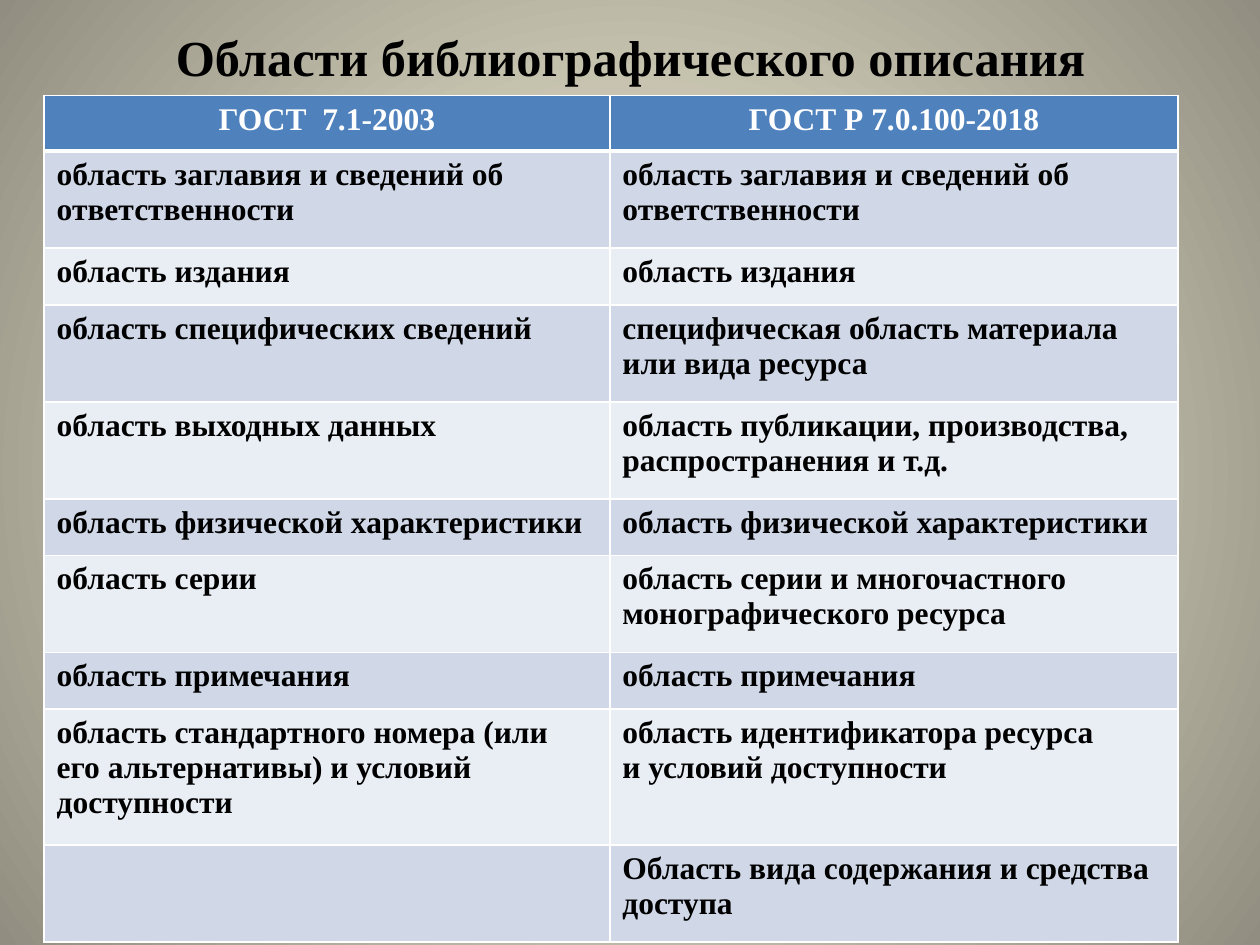
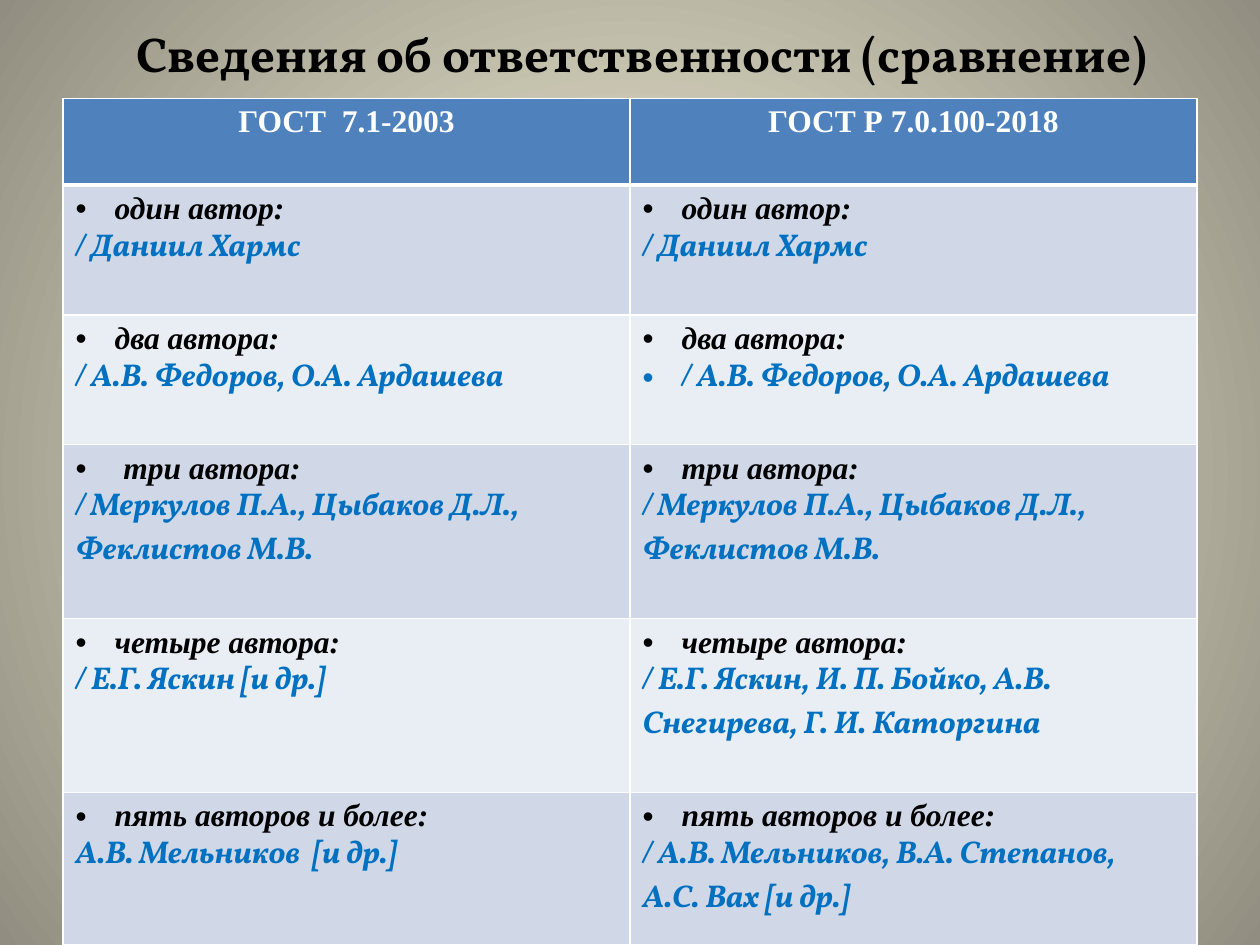
from dataclasses import dataclass

from lxml import etree
from pptx import Presentation
from pptx.dml.color import RGBColor
from pptx.enum import text as t
from pptx.oxml import ns
from pptx.util import Inches, Pt

COLORS = {
    "glow": "FCF7DD",
    "edge": "918E81",
    "black": "000000",
    "white": "FFFFFF",
    "header": "4F81BD",
    "odd": "D0D8E8",
    "even": "E9EDF4",
    "author": "0070C0",
}
SERIF = "Times New Roman"
DISPLAY = "Vollkorn"
HEADERS = ("ГОСТ  7.1-2003", "ГОСТ Р 7.0.100-2018")
BULLET_INDENT = 0.31


@dataclass(frozen=True)
class Box:
    left: float
    top: float
    width: float
    height: float


@dataclass(frozen=True)
class Line:
    text: str
    font: str = SERIF
    color: str = "black"
    italic: bool = False
    center: bool = False
    indent: float = 0


@dataclass(frozen=True)
class Comparison:
    title: str
    title_box: Box
    title_font: str
    title_size: float
    left: float
    top: float
    col_widths: tuple[float, ...]
    row_heights: tuple[float, ...]
    rows: list[tuple[list[Line], ...]]


def areas(text: str) -> list[Line]:
    return [Line(part) for part in text.split("\n")] if text else []


def authors(label: str, names: str, indent: float = BULLET_INDENT,
            names_indent: float = 0) -> list[Line]:
    heading = Line(label, italic=True, indent=indent)
    return [heading] + [
        Line(name, DISPLAY, "author", italic=True, indent=names_indent)
        for name in names.split("\n")
    ]


def rgb(name: str) -> RGBColor:
    return RGBColor.from_string(COLORS[name])


def add_text(p, text: str, *, font: str, size: float = 18, color: str = "black",
             italic: bool = False, center: bool = False, indent: float = 0) -> None:
    p.alignment = t.PP_ALIGN.CENTER if center else t.PP_ALIGN.LEFT
    r = p.add_run()
    r.text = text
    r.font.name = font
    r.font.size = Pt(size)
    r.font.bold = True
    r.font.italic = italic
    r.font.color.rgb = rgb(color)
    if indent:
        props = p._p.get_or_add_pPr()
        props.set("marL", str(Inches(indent)))
        props.set("indent", str(-Inches(indent)))
        etree.SubElement(props, ns.qn("a:buFont")).set("typeface", "Arial")
        etree.SubElement(props, ns.qn("a:buChar")).set("char", "•")


def set_background(master) -> None:
    fill = master.background.fill
    fill.gradient()
    for stop, name in zip(fill.gradient_stops, ("glow", "edge")):
        stop.color.rgb = rgb(name)
    lin = master._element.find(".//" + ns.qn("p:bgPr") + "//" + ns.qn("a:lin"))
    circle = etree.Element(ns.qn("a:path"))
    circle.set("path", "circle")
    focus = etree.SubElement(circle, ns.qn("a:fillToRect"))
    for side in "ltrb":
        focus.set(side, "50000")
    lin.getparent().replace(lin, circle)


def set_borders(cell, top: float, bottom: float) -> None:
    props = cell._tc.get_or_add_tcPr()
    for side, width in (("L", 1), ("R", 1), ("T", top), ("B", bottom)):
        ln = etree.SubElement(props, ns.qn(f"a:ln{side}"))
        ln.set("w", str(Pt(width)))
        solid = etree.SubElement(ln, ns.qn("a:solidFill"))
        etree.SubElement(solid, ns.qn("a:srgbClr")).set("val", COLORS["white"])


def fill_cell(cell, lines: list[Line], row: int) -> None:
    set_borders(cell, top=3 if row == 1 else 1, bottom=3 if row == 0 else 1)
    cell.fill.solid()
    cell.fill.fore_color.rgb = rgb("header" if row == 0 else "odd" if row % 2 else "even")
    tf = cell.text_frame
    for i, line in enumerate(lines):
        p = tf.add_paragraph() if i else tf.paragraphs[0]
        add_text(p, line.text, font=line.font, color=line.color, italic=line.italic,
                 center=line.center, indent=line.indent)


def add_title(s, c: Comparison) -> None:
    sp, box = s.shapes.title, c.title_box
    sp.left, sp.top = Inches(box.left), Inches(box.top)
    sp.width, sp.height = Inches(box.width), Inches(box.height)
    tf = sp.text_frame
    tf.word_wrap = True
    tf.auto_size = t.MSO_AUTO_SIZE.NONE
    tf.vertical_anchor = t.MSO_ANCHOR.MIDDLE
    add_text(tf.paragraphs[0], c.title, font=c.title_font, size=c.title_size, center=True)


def add_comparison(prs, c: Comparison) -> None:
    s = prs.slides.add_slide(prs.slide_layouts[5])
    add_title(s, c)
    header = tuple([Line(h, color="white", center=True)] for h in HEADERS)
    rows = [header, *c.rows]
    table = s.shapes.add_table(
        len(rows), len(HEADERS), Inches(c.left), Inches(c.top),
        Inches(sum(c.col_widths)), Inches(sum(c.row_heights)),
    ).table
    for col, width in zip(table.columns, c.col_widths):
        col.width = Inches(width)
    for i, (cells, height) in enumerate(zip(rows, c.row_heights)):
        table.rows[i].height = Inches(height)
        for j, lines in enumerate(cells):
            fill_cell(table.cell(i, j), lines, i)


AREA_ROWS = [
    ("область заглавия и сведений об\nответственности",
     "область заглавия и сведений об\nответственности"),
    ("область издания", "область издания"),
    ("область специфических сведений",
     "специфическая область материала\nили вида ресурса"),
    ("область выходных данных",
     "область публикации, производства, распространения и т.д."),
    ("область физической характеристики", "область физической характеристики"),
    ("область серии", "область серии и многочастного\nмонографического ресурса"),
    ("область примечания", "область примечания"),
    ("область стандартного номера (или его альтернативы) и условий доступности",
     "область идентификатора ресурса\nи условий доступности"),
    ("", "Область вида содержания и средства доступа"),
]

ONE = "/ Даниил Хармс"
TWO = "/ А.В. Федоров, О.А. Ардашева"
THREE = "/ Меркулов П.А., Цыбаков Д.Л., Феклистов М.В."
AUTHOR_ROWS = [
    (authors("один автор:", ONE), authors("один автор:", ONE)),
    (authors("два автора:", TWO),
     authors("два автора:", TWO, names_indent=BULLET_INDENT)),
    (authors("три автора:", THREE, indent=0.38), authors("три автора:", THREE)),
    (authors("четыре автора:", "/ Е.Г. Яскин [и др.]"),
     authors("четыре автора:",
             "/ Е.Г. Яскин, И. П. Бойко, А.В. Снегирева, Г. И. Каторгина")),
    (authors("пять авторов и более:", "А.В. Мельников  [и др.]"),
     authors("пять авторов и более:",
             "/ А.В. Мельников, В.А. Степанов,\nА.С. Вах [и др.]")),
]

COMPARISONS = [
    Comparison(
        "Области библиографического описания", Box(0.51, 0.3, 8.99, 0.3), SERIF, 28.8,
        0.35, 0.76, (4.49, 4.51),
        (0.44, 0.77, 0.45, 0.77, 0.77, 0.45, 0.77, 0.45, 1.08, 0.77),
        [(areas(old), areas(new)) for old, new in AREA_ROWS],
    ),
    Comparison(
        "Сведения об ответственности (сравнение)", Box(0.59, 0, 9, 0.84), DISPLAY, 28,
        0.5, 0.78, (4.5, 4.5), (0.69, 1.03, 1.03, 1.38, 1.38, 1.21), AUTHOR_ROWS,
    ),
]


def main() -> None:
    prs = Presentation()
    prs.slide_width, prs.slide_height = Inches(10), Inches(7.5)
    set_background(prs.slide_master)
    for comparison in COMPARISONS:
        add_comparison(prs, comparison)
    prs.save("out.pptx")


if __name__ == "__main__":
    main()
